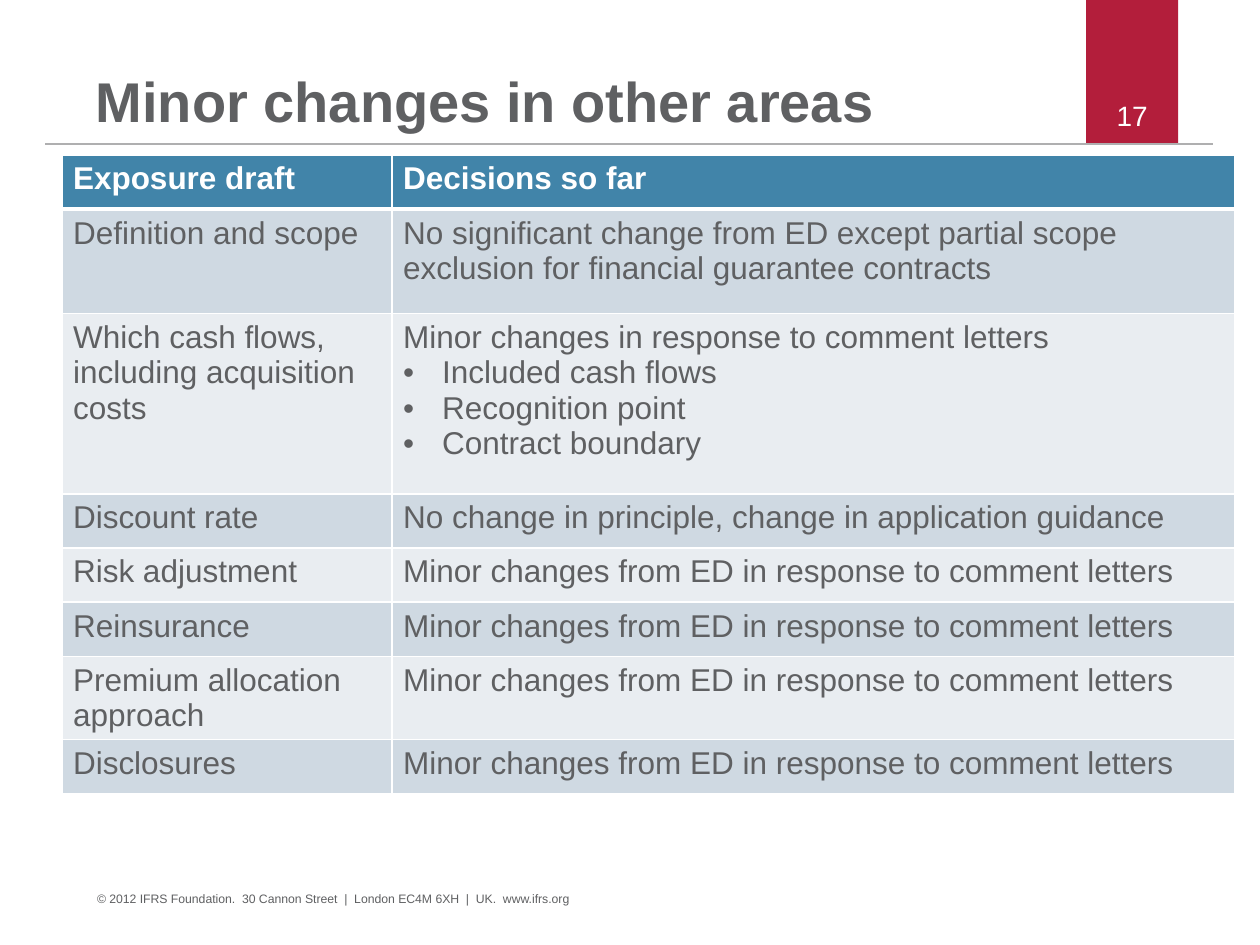
from collections import namedtuple
from dataclasses import dataclass

from lxml.etree import SubElement
from pptx import Presentation
from pptx.dml.color import RGBColor
from pptx.enum.shapes import MSO_CONNECTOR, MSO_SHAPE
from pptx.enum.text import MSO_ANCHOR, MSO_AUTO_SIZE, PP_ALIGN
from pptx.oxml import parse_xml
from pptx.oxml.ns import nsdecls, qn
from pptx.util import Inches, Pt

Box = namedtuple("Box", "left top width height")


@dataclass(frozen=True)
class Theme:
    """Colours, font and type sizes of the deck."""
    font: str = "Arial"
    text: str = "5F6062"
    white: str = "FFFFFF"
    red: str = "B31E3B"
    rule: str = "AFAFB0"
    header: str = "4184A9"
    bands: tuple = ("CFD9E2", "E9EDF1")
    title_size: int = 32
    table_size: int = 18
    number_size: int = 16
    footer_size: int = 7


THEME = Theme()
MINOR = "Minor changes from ED in response to comment letters"
ROWS = [
    (0.43, "Exposure draft", ["Decisions so far"]),
    (0.83, "Definition and scope",
     ["No significant change from ED except partial scope exclusion for financial guarantee contracts"]),
    (1.43, "Which cash flows, including acquisition costs",
     ["Minor changes in response to comment letters",
      "Included cash flows", "Recognition point", "Contract boundary"]),
    (0.43, "Discount rate", ["No change in principle, change in application guidance"]),
    (0.43, "Risk adjustment", [MINOR]),
    (0.43, "Reinsurance", [MINOR]),
    (0.66, "Premium allocation approach", [MINOR]),
    (0.43, "Disclosures", [MINOR]),
]
COLUMNS = (2.62, 6.69)


def place(box):
    """Convert a box in inches to lengths."""
    return [Inches(value) for value in box]


def color(value):
    """Turn a hex string into a colour."""
    return RGBColor.from_string(value)


def add_span(para, text, size, ink, bold=False):
    """Add one formatted run to a paragraph."""
    span = para.add_run()
    span.text = text
    span.font.name = THEME.font
    span.font.size = Pt(size)
    span.font.bold = bold
    span.font.color.rgb = color(ink)


def clear_margins(frame):
    """Remove the insets of a text frame and let it wrap."""
    frame.margin_left = frame.margin_top = frame.margin_right = frame.margin_bottom = 0
    frame.word_wrap = True
    frame.auto_size = MSO_AUTO_SIZE.NONE


def add_label(page, box, text, size, ink, align):
    """Add a single-line text box."""
    frame = page.shapes.add_textbox(*place(box)).text_frame
    clear_margins(frame)
    frame.paragraphs[0].alignment = align
    add_span(frame.paragraphs[0], text, size, ink)


def add_masthead(page, box):
    """Place the red number tab, the rule below it and the title."""
    bottom = box.top + box.height
    tab_box = Box(box.left + 8.26, box.top, 0.73, box.height)
    tab = page.shapes.add_shape(MSO_SHAPE.RECTANGLE, *place(tab_box))
    tab.shadow.inherit = False
    tab.fill.solid()
    tab.fill.fore_color.rgb = color(THEME.red)
    tab.line.fill.background()
    rule = page.shapes.add_connector(
        MSO_CONNECTOR.STRAIGHT,
        *place((box.left, bottom, box.left + box.width, bottom)))
    rule.line.color.rgb = color(THEME.rule)
    rule.line.width = Pt(1.2)
    SubElement(rule._element.spPr, qn("a:effectLst"))
    title = page.shapes.title
    title.left, title.top, title.width, title.height = place(
        Box(box.left + 0.4, box.top + 0.2, 7.41, 0.87))
    frame = title.text_frame
    clear_margins(frame)
    frame.vertical_anchor = MSO_ANCHOR.BOTTOM
    para = frame.paragraphs[0]
    para.alignment = PP_ALIGN.LEFT
    para.line_spacing = 0.9
    add_span(para, "Minor changes in other areas", THEME.title_size, THEME.text, True)
    add_label(page, Box(tab_box.left, bottom - 0.36, tab_box.width, 0.22),
              "17", THEME.number_size, THEME.white, PP_ALIGN.CENTER)


def add_bullet(para):
    """Give a paragraph a hanging bullet."""
    properties = para._p.get_or_add_pPr()
    properties.set("marL", str(Inches(0.31)))
    properties.set("indent", str(-Inches(0.31)))
    SubElement(properties, qn("a:buFont"), typeface=THEME.font)
    SubElement(properties, qn("a:buChar"), char="•")


def set_borders(cell, widths):
    """Draw white cell borders with the widths for left, right, top and bottom."""
    properties = cell._tc.get_or_add_tcPr()
    for index, (side, width) in enumerate(zip("LRTB", widths)):
        properties.insert(index, parse_xml(
            f'<a:ln{side} {nsdecls("a")} w="{Pt(width)}"><a:solidFill>'
            f'<a:srgbClr val="{THEME.white}"/></a:solidFill></a:ln{side}>'))


def fill_cell(cell, lines, row_index):
    """Write a cell, with every line after the first as a bullet."""
    is_header = row_index == 0
    cell.fill.solid()
    cell.fill.fore_color.rgb = color(
        THEME.header if is_header else THEME.bands[(row_index - 1) % 2])
    set_borders(cell, (1, 1, 3 if row_index == 1 else 1, 3 if is_header else 1))
    cell.margin_left = cell.margin_right = Inches(0.09)
    cell.margin_top = cell.margin_bottom = Inches(0.05)
    frame = cell.text_frame
    for index, line in enumerate(lines):
        para = frame.add_paragraph() if index else frame.paragraphs[0]
        if index:
            add_bullet(para)
        add_span(para, line, THEME.table_size,
                 THEME.white if is_header else THEME.text, is_header)


def add_decisions(page, box):
    """Place the table of topics and decisions."""
    table = page.shapes.add_table(len(ROWS), len(COLUMNS), *place(box)).table
    for column, width in zip(table.columns, COLUMNS):
        column.width = Inches(width)
    for index, (height, topic, decision) in enumerate(ROWS):
        table.rows[index].height = Inches(height)
        fill_cell(table.cell(index, 0), [topic], index)
        fill_cell(table.cell(index, 1), decision, index)


def main():
    """Build and save the deck."""
    deck = Presentation()
    deck.slide_width, deck.slide_height = Inches(10), Inches(7.5)
    page = deck.slides.add_slide(deck.slide_layouts[5])
    add_masthead(page, Box(0.36, 0, 9.27, 1.14))
    add_decisions(page, Box(0.49, 1.23, sum(COLUMNS), sum(row[0] for row in ROWS)))
    add_label(page, Box(0.77, 7.07, 6.18, 0.21),
              "© 2012 IFRS Foundation.  30 Cannon Street  |  London EC4M 6XH  |  UK.  www.ifrs.org",
              THEME.footer_size, THEME.text, PP_ALIGN.LEFT)
    deck.save("out.pptx")


if __name__ == "__main__":
    main()
